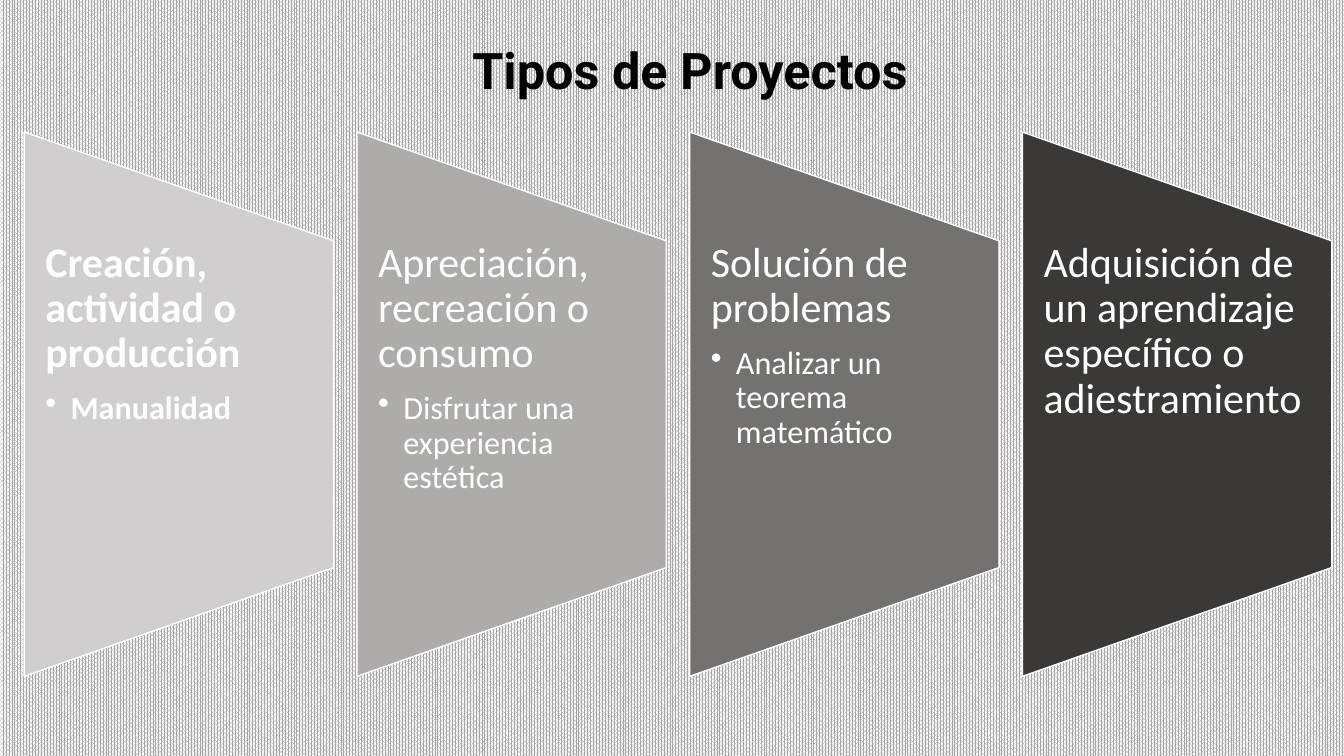
"""Build the slide on the types of projects."""
from dataclasses import dataclass

from lxml import etree
from pptx import Presentation
from pptx.dml.color import RGBColor
from pptx.enum.dml import MSO_PATTERN
from pptx.enum.shapes import MSO_SHAPE
from pptx.enum.text import MSO_ANCHOR, MSO_AUTO_SIZE, PP_ALIGN
from pptx.oxml.ns import qn
from pptx.util import Inches, Pt

PANEL_SHAPE = MSO_SHAPE.FLOWCHART_MANUAL_OPERATION
BACKDROP_PATTERN = MSO_PATTERN.PERCENT_80
CENTER, LEFT = PP_ALIGN.CENTER, PP_ALIGN.LEFT
TOP, MIDDLE = MSO_ANCHOR.TOP, MSO_ANCHOR.MIDDLE
NO_AUTOFIT = MSO_AUTO_SIZE.NONE

HEADING = "Tipos de Proyectos"
PROJECT_TYPES = [
    ("Creación, actividad o producción", "Manualidad", "D0CECE", True),
    ("Apreciación, recreación o consumo", "Disfrutar una experiencia estética", "AFABAB", False),
    ("Solución de problemas", "Analizar un teorema matemático", "767171", False),
    ("Adquisición de un aprendizaje específico o adiestramiento", None, "3B3838", False),
]


@dataclass(frozen=True)
class Theme:
    heading_font: str = "Roboto"
    body_font: str = "Calibri"
    heading_size: int = 36
    type_size: int = 30
    example_size: int = 23
    ink: str = "000000"
    paper: str = "FFFFFF"
    weave: str = "A5A5A5"


THEME = Theme()
SLIDE_W, SLIDE_H = 13.33, 7.5
HEADING_BOX = (0.92, 0.4, 11.85, 0.66)
GRID_LEFT, COLUMN_STEP = 0.24, 3.3
PANEL_W, PANEL_H, PANEL_MIDDLE = 3.07, 5.4, 4.01
TEXT_H = PANEL_H * 0.6
TEXT_INSET, BULLET_INDENT = 0.21, 0.25
LINE_SPACING = 0.9


def color(code):
    return RGBColor.from_string(code)


def style(paragraph, font_name, size, tone, bold, align):
    paragraph.alignment = align
    paragraph.line_spacing = LINE_SPACING
    for run in paragraph.runs:
        run.font.name = font_name
        run.font.size = Pt(size)
        run.font.bold = bold
        run.font.color.rgb = color(tone)


def add_bullet(paragraph):
    properties = paragraph._p.get_or_add_pPr()
    properties.set("marL", str(Inches(BULLET_INDENT)))
    properties.set("indent", str(-Inches(BULLET_INDENT)))
    etree.SubElement(properties, qn("a:buChar"), char="•")


def add_heading(slide):
    heading = slide.shapes.title
    heading.left, heading.top, heading.width, heading.height = map(Inches, HEADING_BOX)
    frame = heading.text_frame
    frame.text = HEADING
    frame.auto_size = NO_AUTOFIT
    frame.vertical_anchor = MIDDLE
    style(frame.paragraphs[0], THEME.heading_font, THEME.heading_size, THEME.ink, True, CENTER)


def add_panel(shapes, left, tone):
    panel = shapes.add_shape(
        PANEL_SHAPE,
        Inches(left + (PANEL_W - PANEL_H) / 2), Inches(PANEL_MIDDLE - PANEL_W / 2),
        Inches(PANEL_H), Inches(PANEL_W),
    )
    panel.rotation = 270
    panel.shadow.inherit = False
    panel.fill.solid()
    panel.fill.fore_color.rgb = color(tone)
    panel.line.color.rgb = color(THEME.paper)
    panel.line.width = Pt(1)


def add_description(shapes, left, project_type, example, bold):
    description = shapes.add_textbox(
        Inches(left), Inches(PANEL_MIDDLE - TEXT_H / 2), Inches(PANEL_W), Inches(TEXT_H)
    )
    frame = description.text_frame
    frame.word_wrap = True
    frame.vertical_anchor = TOP
    frame.margin_left = frame.margin_right = Inches(TEXT_INSET)
    frame.margin_top = frame.margin_bottom = 0
    lead = frame.paragraphs[0]
    lead.text = project_type
    lead.space_after = Pt(THEME.type_size * 0.35)
    style(lead, THEME.body_font, THEME.type_size, THEME.paper, bold, LEFT)
    if example:
        item = frame.add_paragraph()
        item.text = example
        item.level = 1
        add_bullet(item)
        style(item, THEME.body_font, THEME.example_size, THEME.paper, bold, LEFT)


def main():
    deck = Presentation()
    deck.slide_width, deck.slide_height = Inches(SLIDE_W), Inches(SLIDE_H)
    slide = deck.slides.add_slide(deck.slide_layouts.get_by_name("Title Only"))
    backdrop = slide.background.fill
    backdrop.patterned()
    backdrop.pattern = BACKDROP_PATTERN
    backdrop.fore_color.rgb = color(THEME.weave)
    backdrop.back_color.rgb = color(THEME.paper)
    add_heading(slide)
    columns = slide.shapes.add_group_shape().shapes
    for index, (project_type, example, tone, bold) in enumerate(PROJECT_TYPES):
        left = GRID_LEFT + index * COLUMN_STEP
        add_panel(columns, left, tone)
        add_description(columns, left, project_type, example, bold)
    deck.save("out.pptx")


if __name__ == "__main__":
    main()
